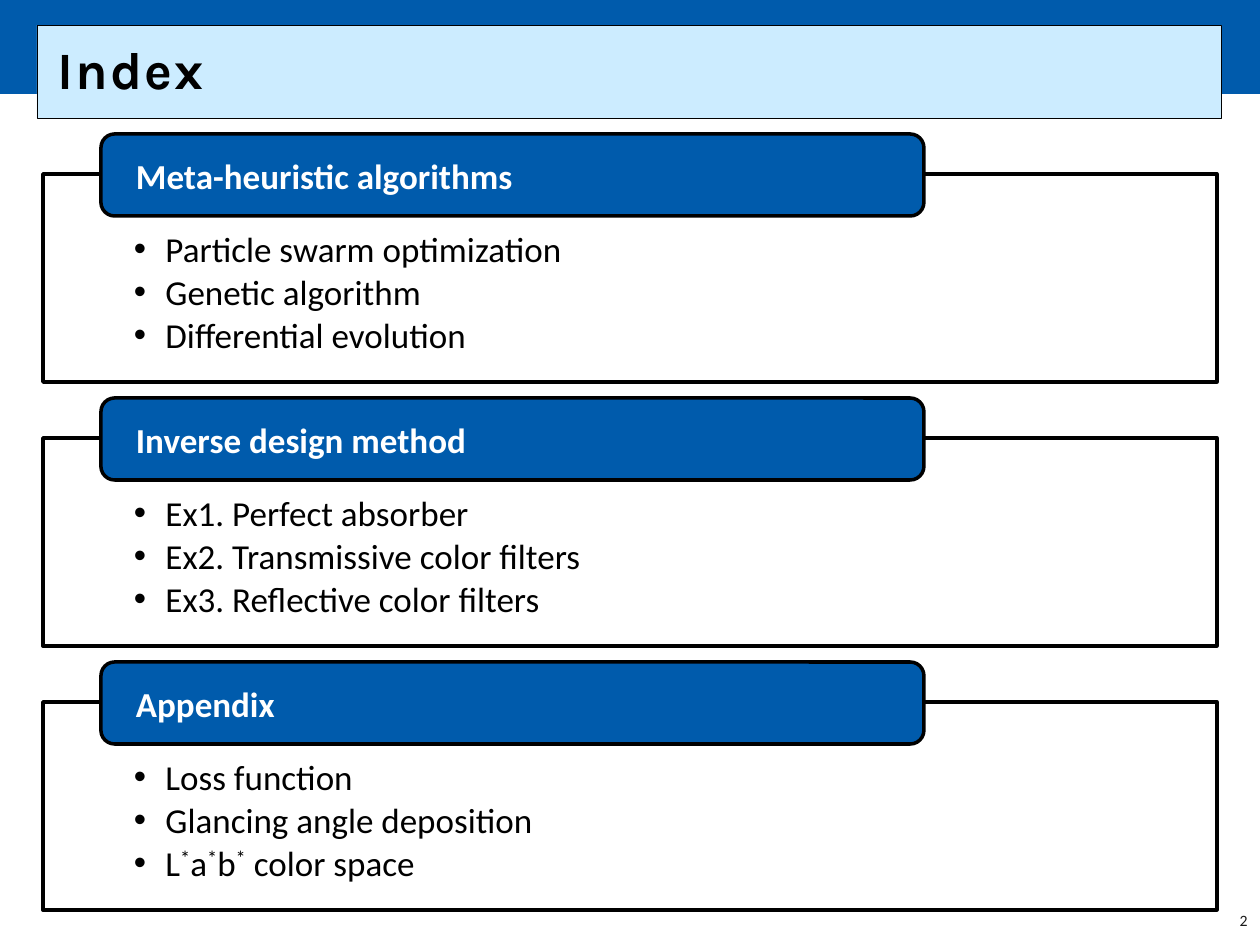
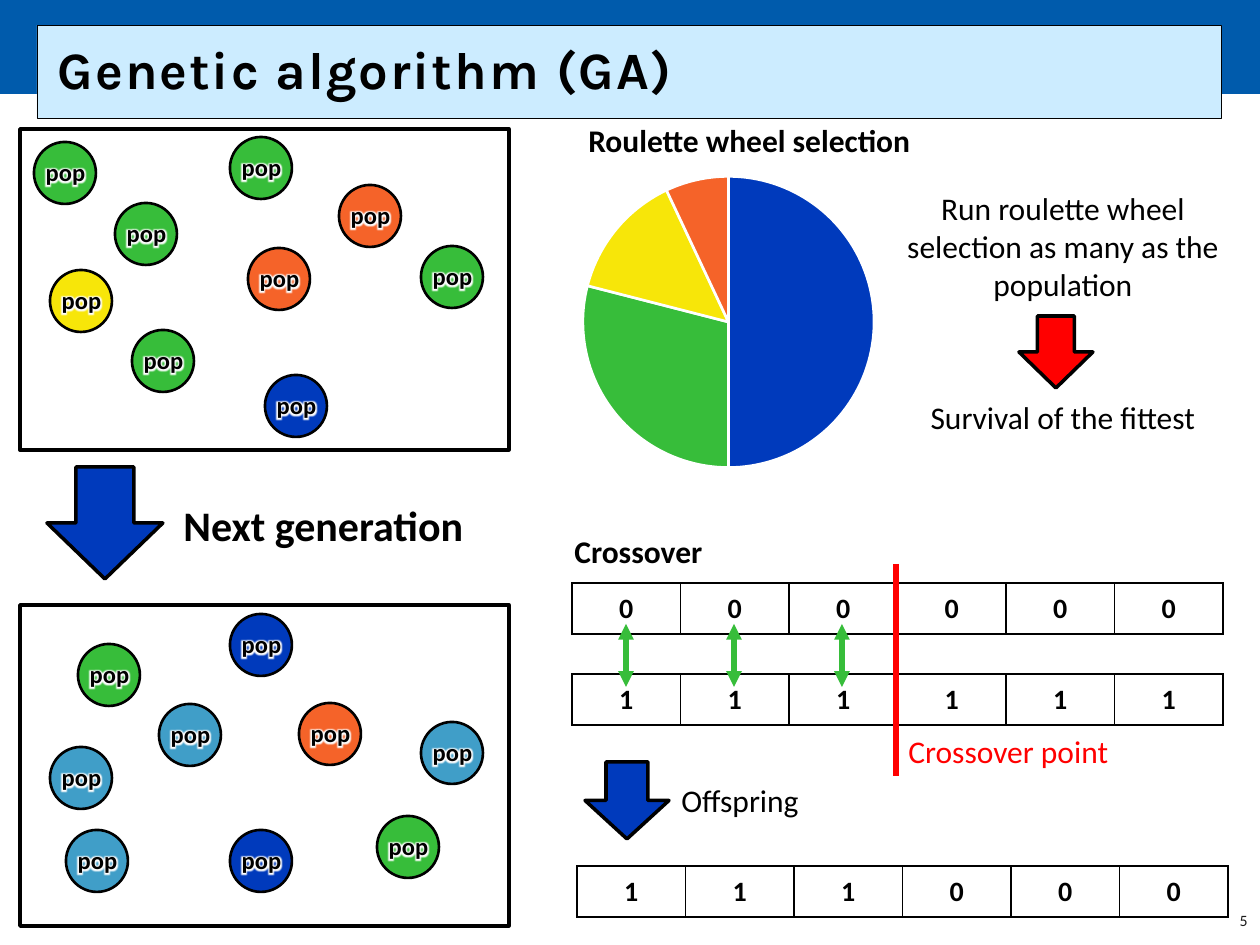
from dataclasses import dataclass
from itertools import groupby

from lxml.etree import SubElement
from pptx import Presentation
from pptx.chart.data import CategoryChartData
from pptx.dml.color import RGBColor
from pptx.enum.chart import XL_CHART_TYPE
from pptx.enum.shapes import MSO_CONNECTOR, MSO_SHAPE
from pptx.enum.text import MSO_ANCHOR, MSO_AUTO_SIZE, PP_ALIGN
from pptx.oxml.ns import qn
from pptx.util import Inches, Pt


@dataclass(frozen=True)
class Theme:
    band: str = "005BAC"
    pale: str = "CCECFF"
    ink: str = "000000"
    grey: str = "1A1A1A"
    white: str = "FFFFFF"
    blue: str = "003ABC"
    green: str = "37BD3A"
    gold: str = "F7E609"
    rust: str = "F56329"
    sky: str = "409EC8"
    red: str = "FF0000"
    head: str = "Karla"
    body: str = "Calibri"
    title: int = 30
    large: int = 24
    list: int = 20
    text: int = 18
    cell: int = 16
    pop: int = 14
    chart: int = 10
    page: int = 9


T = Theme()
PX = 7257  # EMU in one px, 126 px to the inch
LEFT = {"alignment": PP_ALIGN.LEFT}
MID = {"alignment": PP_ALIGN.CENTER}
BOLD = {"bold": True}


def draw(page, kind, box, fill=None, width=2):
    """Add a preset shape, or a text box when kind is None."""
    spot = [v * PX for v in box]
    if kind is None:
        return page.shapes.add_textbox(*spot)
    shape = page.shapes.add_shape(kind, *spot)
    shape.shadow.inherit = False
    if fill:
        shape.fill.solid()
        shape.fill.fore_color.rgb = RGBColor.from_string(fill)
    else:
        shape.fill.background()
    if width:
        shape.line.color.rgb = RGBColor.from_string(T.ink)
        shape.line.width = Pt(width)
    else:
        shape.line.fill.background()
    return shape


def write(frame, text, size, color=T.ink, para=LEFT, font={}, **body):
    """Fill a text frame, one paragraph a line, with raised asterisks."""
    for key, val in body.items():
        setattr(frame, key, val)
    for row, line in enumerate(text.split("\n")):
        item = frame.add_paragraph() if row else frame.paragraphs[0]
        for key, val in para.items():
            setattr(item, key, val)
        for star, part in groupby(line, lambda c: c == "*"):
            run = item.add_run()
            run.text = "".join(part)
            look = {"name": T.body, "size": Pt(size), **font}
            for key, val in look.items():
                setattr(run.font, key, val)
            run.font.color.rgb = RGBColor.from_string(color)
            if star:
                run.font._element.set("baseline", "30000")


deck = Presentation()
deck.slide_width, deck.slide_height = Inches(10), Inches(7.5)
plan = deck.slide_layouts[5]

# Titles and page numbers
pages = []
for name, num in (("Index", "2"), ("Genetic algorithm (GA)", "5")):
    page = deck.slides.add_slide(plan)
    pages.append(page)
    title = page.shapes.title
    spot = {"left": 43, "top": 30, "width": 1174, "height": 84}
    for key, val in spot.items():
        setattr(title, key, val * PX)
    write(title.text_frame, name, T.title,
          para={**LEFT, "line_spacing": 0.9}, font={"name": T.head, **BOLD},
          margin_left=15 * PX, margin_top=15 * PX, margin_right=15 * PX,
          margin_bottom=13 * PX, vertical_anchor=MSO_ANCHOR.MIDDLE,
          auto_size=MSO_AUTO_SIZE.NONE, word_wrap=True)
    title.text_frame.paragraphs[0].runs[0].font._element.set("spc", "110")
    foot = draw(page, None, (1173, 895, 87, 50))
    write(foot.text_frame, num, T.page, T.grey,
          {"alignment": PP_ALIGN.RIGHT}, word_wrap=True,
          vertical_anchor=MSO_ANCHOR.MIDDLE)
index, genes = pages

# Bands, moved to the shared layout
bands = (((0, 0, 1260, 94), T.band, 0), ((37, 25, 1185, 93), T.pale, 0.5))
for pos, (box, fill, width) in enumerate(bands):
    band = draw(index, MSO_SHAPE.RECTANGLE, box, fill, width)
    band.element.nvSpPr.cNvPr.set("id", str(90 + pos))
    plan.shapes.element.insert(2 + pos, band.element)

# Index: three framed lists with a tag on the top edge
parts = {
    "Meta-heuristic algorithms":
        "Particle swarm optimization\nGenetic algorithm\nDifferential evolution",
    "Inverse design method":
        "Ex1. Perfect absorber\nEx2. Transmissive color filters\n"
        "Ex3. Reflective color filters",
    "Appendix":
        "Loss function\nGlancing angle deposition\nL*a*b* color space",
}
for row, (name, text) in enumerate(parts.items()):
    top = 134 + 264 * row
    panel = draw(index, MSO_SHAPE.RECTANGLE, (43, top + 40, 1174, 208), T.white)
    write(panel.text_frame, text, T.list,
          para={**LEFT, "level": 1, "line_spacing": 0.9, "space_after": Pt(3)},
          margin_left=91 * PX, margin_top=58 * PX, margin_right=91 * PX,
          margin_bottom=20 * PX, vertical_anchor=MSO_ANCHOR.TOP)
    for item in panel.text_frame.paragraphs:
        prop = item._p.get_or_add_pPr()
        prop.set("marL", "228600")
        prop.set("indent", "-228600")
        SubElement(prop, qn("a:buFont")).set("typeface", "Arial")
        SubElement(prop, qn("a:buChar")).set("char", "•")
    tag = draw(index, MSO_SHAPE.ROUNDED_RECTANGLE, (101, top, 823, 82), T.band)
    write(tag.text_frame, name, T.list, T.white, font=BOLD,
          margin_left=31 * PX, margin_right=31 * PX, margin_top=0,
          margin_bottom=0, vertical_anchor=MSO_ANCHOR.MIDDLE)

# Populations before and after selection
herds = (
    (129, ((34, 142, T.green), (115, 203, T.green), (50, 270, T.gold),
           (132, 330, T.green), (230, 137, T.green), (248, 248, T.rust),
           (265, 375, T.blue), (339, 185, T.rust), (421, 246, T.green))),
    (605, ((78, 644, T.green), (159, 704, T.sky), (50, 747, T.sky),
           (66, 830, T.sky), (230, 614, T.blue), (377, 816, T.green),
           (230, 830, T.blue), (299, 703, T.rust), (421, 722, T.sky))),
)
for top, dots in herds:
    for x, y, fill in dots:
        draw(genes, MSO_SHAPE.OVAL, (x, y, 62, 62), fill, 1.5)
        label = draw(genes, None, (x - 13, y + 9, 89, 43))
        write(label.text_frame, "pop", T.pop, para=MID, font=BOLD,
              word_wrap=True)
        # White glow, placed right after the text fill
        prop = label.text_frame.paragraphs[0].runs[0].font._element
        glow = SubElement(prop, qn("a:effectLst"))
        prop.find(qn("a:solidFill")).addnext(glow)
        glow = SubElement(glow, qn("a:glow"), rad="63500")
        SubElement(glow, qn("a:srgbClr"), val=T.white)
    draw(genes, MSO_SHAPE.RECTANGLE, (20, top, 489, 321))

# Block arrows
for box, fill in (((47, 467, 116, 112), T.blue), ((1019, 316, 74, 72), T.red),
                  ((585, 762, 84, 77), T.blue)):
    draw(genes, MSO_SHAPE.DOWN_ARROW, box, fill)

# Roulette wheel
data = CategoryChartData()
data.categories = ["1", "2", "3", "4"]
data.add_series("Series 1", (50, 29, 14, 7))
spot = [v * PX for v in (484, 159, 489, 326)]
wheel = genes.shapes.add_chart(XL_CHART_TYPE.PIE, *spot, data).chart
wheel.has_legend = wheel.has_title = False
wheel.font.name, wheel.font.size = T.body, Pt(T.chart)
wheel.font.color.rgb = RGBColor.from_string(T.ink)
plot = wheel.plots[0]
plot.vary_by_categories = True
for pos, fill in enumerate((T.blue, T.green, T.gold, T.rust)):
    look = plot.series[0].points[pos].format
    look.fill.solid()
    look.fill.fore_color.rgb = RGBColor.from_string(fill)
    look.line.color.rgb = RGBColor.from_string(T.white)
    look.line.width = Pt(1.5)

# Labels
notes = (
    ((171, 493, 309, 63), "Next generation", T.large, T.ink, LEFT, BOLD, False),
    ((576, 115, 352, 50), "Roulette wheel selection", T.text, T.ink, LEFT,
     BOLD, False),
    ((891, 183, 344, 127),
     "Run roulette wheel selection as many as the population",
     T.text, T.ink, MID, {}, True),
    ((891, 392, 344, 50), "Survival of the fittest", T.text, T.ink, MID, {},
     True),
    ((562, 526, 154, 50), "Crossover", T.text, T.ink, LEFT, BOLD, False),
    ((896, 726, 231, 50), "Crossover point", T.text, T.red, LEFT, {}, False),
    ((669, 775, 147, 50), "Offspring", T.text, T.ink, LEFT, {}, False),
)
for box, text, size, color, para, font, wrap in notes:
    note = draw(genes, None, box)
    write(note.text_frame, text, size, color, para, font, word_wrap=wrap)

# Gene strings: two parents and their child
for x, y, bits in ((572, 583, "000000"), (572, 674, "111111"),
                   (577, 866, "111000")):
    spot = [v * PX for v in (x, y, 651, 51)]
    table = genes.shapes.add_table(1, len(bits), *spot).table
    table.first_row = table.horz_banding = False
    for cell, bit in zip(table.iter_cells(), bits):
        write(cell.text_frame, bit, T.cell, para=MID, font=BOLD)
        cell.vertical_anchor = MSO_ANCHOR.MIDDLE
        prop = cell._tc.get_or_add_tcPr()
        for side in ("lnL", "lnR", "lnT", "lnB"):
            edge = SubElement(prop, qn("a:" + side), w="12700")
            edge = SubElement(edge, qn("a:solidFill"))
            SubElement(edge, qn("a:srgbClr"), val=T.ink)
        cell.fill.solid()
        cell.fill.fore_color.rgb = RGBColor.from_string(T.white)

# Crossover point and swap arrows
lines = [(896, 564, 776, T.red, ())]
for col in range(3):
    lines.append((626 + 108 * col, 687, 624, T.green, ("headEnd", "tailEnd")))
for x, start, end, color, tips in lines:
    spot = [v * PX for v in (x, start, x, end)]
    line = genes.shapes.add_connector(MSO_CONNECTOR.STRAIGHT, *spot)
    line.line.color.rgb = RGBColor.from_string(color)
    line.line.width = Pt(3)
    prop = line.element.spPr
    for tip in tips:
        SubElement(prop.find(qn("a:ln")), qn("a:" + tip), type="triangle")
    SubElement(prop, qn("a:effectLst"))

deck.save("out.pptx")
